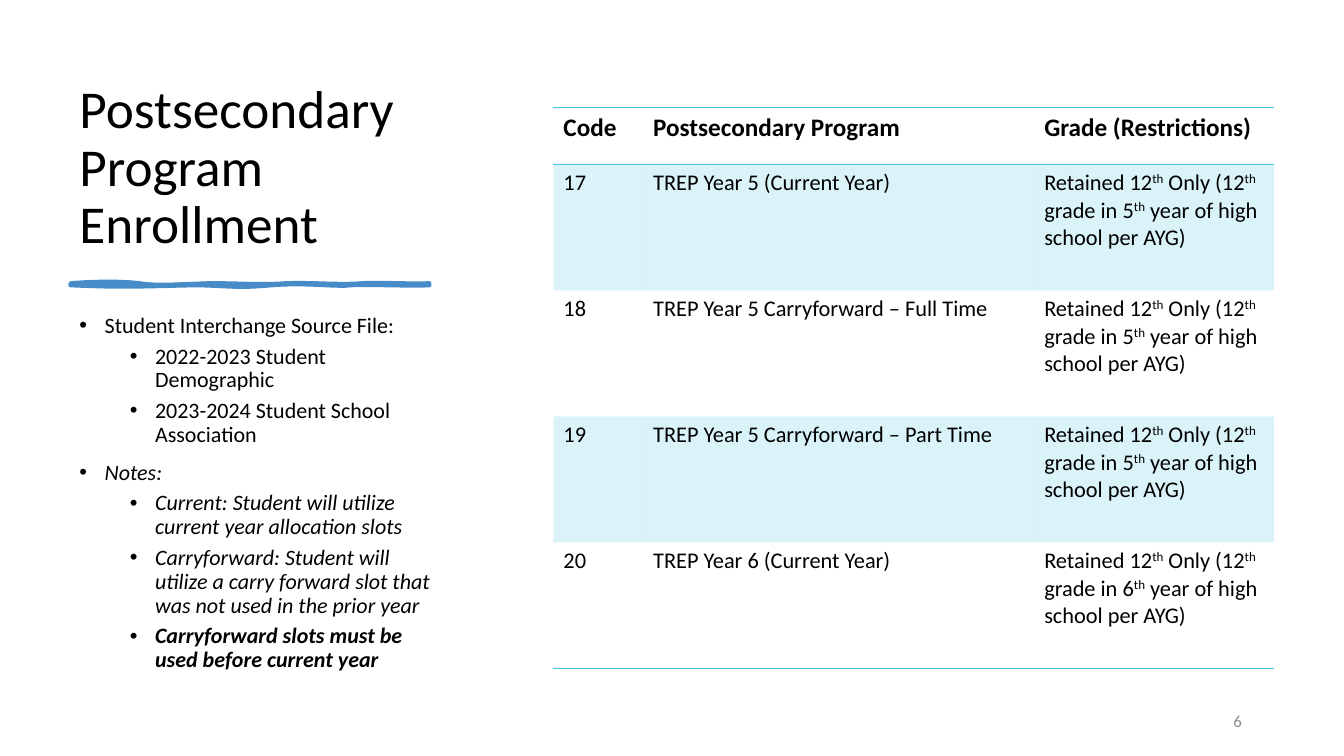
from lxml.etree import SubElement
from pptx import Presentation
from pptx.dml.color import RGBColor
from pptx.enum.text import MSO_ANCHOR, PP_ALIGN
from pptx.oxml.ns import qn
from pptx.util import Emu, Inches, Pt

FONT = "Calibri"
BLACK, GREY, CYAN = "000000", "8C8C8C", "48C3E3"
STROKE, STROKE_EDGE = "5097D0", "488BC9"
NO_TABLE_STYLE = "{2D5ABB26-0587-4C30-8999-92F81FD0307C}"
COLUMNS = [0.89, 3.88, 2.38]
ROWS = [0.56] + [1.25] * 4
HEADINGS = ["Code", "Postsecondary Program", "Grade (Restrictions)"]
PROGRAMS = [
    ("17", "TREP Year 5 (Current Year)", 5),
    ("18", "TREP Year 5 Carryforward – Full Time", 5),
    ("19", "TREP Year 5 Carryforward – Part Time", 5),
    ("20", "TREP Year 6 (Current Year)", 6),
]
NOTES = [
    ("Student Interchange Source File:", 0, {}),
    ("2022-2023 Student Demographic", 1, {}),
    ("2023-2024 Student School Association", 1, {}),
    ("Notes:", 0, {"italic": True}),
    ("Current: Student will utilize current year allocation slots", 1, {"italic": True}),
    ("Carryforward: Student will utilize a carry forward slot that was not used "
     "in the prior year", 1, {"italic": True}),
    ("Carryforward slots must be used before current year", 1,
     {"italic": True, "bold": True}),
]
BRUSH_TOP = [
    (0.7, 2.81), (0.97, 2.79), (1.21, 2.79), (1.38, 2.81), (1.55, 2.84),
    (1.77, 2.82), (2.09, 2.81), (2.41, 2.81), (2.6, 2.83), (2.84, 2.81),
    (3.08, 2.8), (3.39, 2.83), (3.59, 2.81), (3.79, 2.8), (4.12, 2.82), (4.26, 2.81),
]
BRUSH_BOTTOM = [
    (4.26, 2.83), (4.08, 2.84), (3.64, 2.82), (3.48, 2.83), (3.32, 2.85),
    (3.04, 2.8), (2.7, 2.83), (2.35, 2.86), (2.31, 2.84), (1.99, 2.83),
    (1.66, 2.83), (1.32, 2.86), (0.7, 2.83),
]


def color(value):
    """Turn a hex string into a colour."""
    return RGBColor.from_string(value)


def write(para, text, size=16, fill=BLACK, bold=False, italic=False, align=None,
          spacing=None, before=None, after=None):
    """Write text into a paragraph; parts between carets are superscript."""
    para.alignment = align
    para.line_spacing = spacing
    para.space_before = before
    para.space_after = after
    for index, part in enumerate(text.split("^")):
        span = para.add_run()
        span.text = part
        font = span.font
        font.name, font.size = FONT, Pt(size)
        font.bold, font.italic = bold, italic
        font.color.rgb = color(fill)
        if index % 2:
            font._element.set("baseline", "30000")


def add_box(page, box, anchor=MSO_ANCHOR.TOP):
    """Add a wrapping text box and return its frame."""
    frame = page.shapes.add_textbox(*map(Inches, box)).text_frame
    frame.word_wrap = True
    frame.vertical_anchor = anchor
    return frame


def add_title(page, box):
    """Add the slide title, resting on the bottom of its box."""
    frame = add_box(page, box, MSO_ANCHOR.BOTTOM)
    write(frame.paragraphs[0], "Postsecondary Program Enrollment", size=38, spacing=0.9)


def add_notes(page, box):
    """Add the two-level bulleted list."""
    frame = add_box(page, box)
    for index, (text, level, style) in enumerate(NOTES):
        para = frame.add_paragraph() if index else frame.paragraphs[0]
        para.level = level
        properties = para._p.get_or_add_pPr()
        properties.set("marL", str(Inches(0.25 + 0.5 * level)))
        properties.set("indent", str(-Inches(0.25)))
        SubElement(properties, qn("a:buFont"), typeface="Arial")
        SubElement(properties, qn("a:buChar"), char="•")
        before = Pt(5 if level else 10) if index else Pt(0)
        write(para, text, size=15.7, spacing=0.9, before=before, **style)


def curve(points, steps=10):
    """Sample a chain of cubic curves."""
    samples = [points[0]]
    for start in range(0, len(points) - 1, 3):
        knots = points[start:start + 4]
        for step in range(1, steps + 1):
            t = step / steps
            weights = [(1 - t) ** 3, 3 * t * (1 - t) ** 2, 3 * t * t * (1 - t), t ** 3]
            samples.append(tuple(sum(w * knot[axis] for w, knot in zip(weights, knots))
                                 for axis in (0, 1)))
    return samples


def add_brush_stroke(page):
    """Draw the wavy rule under the title."""
    outline = [(Inches(x), Inches(y)) for x, y in curve(BRUSH_TOP) + curve(BRUSH_BOTTOM)]
    builder = page.shapes.build_freeform(*outline[0])
    builder.add_line_segments(outline[1:], close=True)
    stroke = builder.convert_to_shape()
    stroke.shadow.inherit = False
    stroke.fill.solid()
    stroke.fill.fore_color.rgb = color(STROKE)
    stroke.line.color.rgb = color(STROKE_EDGE)
    stroke.line.width = Pt(3)
    SubElement(stroke.line._get_or_add_ln(), qn("a:round"))


def add_border(cell, side):
    """Draw one cyan border of a cell."""
    line = SubElement(cell._tc.get_or_add_tcPr(), qn(f"a:{side}"), w=str(Pt(1)))
    SubElement(SubElement(line, qn("a:solidFill")), qn("a:srgbClr"), val=CYAN)


def shade(cell):
    """Fill a cell with translucent cyan."""
    cell.fill.solid()
    cell.fill.fore_color.rgb = color(CYAN)
    tint = cell._tc.tcPr.find(f"{qn('a:solidFill')}/{qn('a:srgbClr')}")
    SubElement(tint, qn("a:alpha"), val="20000")


def add_program_table(page, box):
    """Add the table of codes, programs and grades."""
    frame = page.shapes.add_table(len(ROWS), len(COLUMNS), *map(Inches, box))
    table = frame.table
    table.first_row = table.horz_banding = False
    table._tbl.tblPr.find(qn("a:tableStyleId")).text = NO_TABLE_STYLE
    for column, width in zip(table.columns, COLUMNS):
        column.width = Inches(width)
    for row, height in zip(table.rows, ROWS):
        row.height = Inches(height)
    records = [HEADINGS] + [
        (code, program, f"Retained 12^th^ Only (12^th^ grade in {year}^th^ "
                        "year of high school per AYG)")
        for code, program, year in PROGRAMS]
    for index, record in enumerate(records):
        header = index == 0
        for cell, text in zip(table.rows[index].cells, record):
            write(cell.text_frame.paragraphs[0], text,
                  size=18 if header else 16, bold=header)
            if header:
                add_border(cell, "lnT")
            if header or index == len(PROGRAMS):
                add_border(cell, "lnB")
            if index % 2:
                shade(cell)
            else:
                cell.fill.background()


def add_page_number(page, box):
    """Add the page number at the lower right."""
    frame = add_box(page, box, MSO_ANCHOR.MIDDLE)
    write(frame.paragraphs[0], "6", size=12, fill=GREY, align=PP_ALIGN.RIGHT, after=Pt(6))


def main():
    """Build the slide and save it."""
    deck = Presentation()
    deck.slide_width, deck.slide_height = Emu(12192000), Inches(7.5)
    page = deck.slides.add_slide(deck.slide_layouts[6])
    add_title(page, (0.69, 0.7, 3.75, 1.88))
    add_brush_stroke(page)
    add_notes(page, (0.69, 3.07, 3.75, 3.73))
    add_page_number(page, (9.42, 6.95, 3, 0.4))
    add_program_table(page, (5.49, 1.07, sum(COLUMNS), sum(ROWS)))
    deck.save("out.pptx")


if __name__ == "__main__":
    main()
